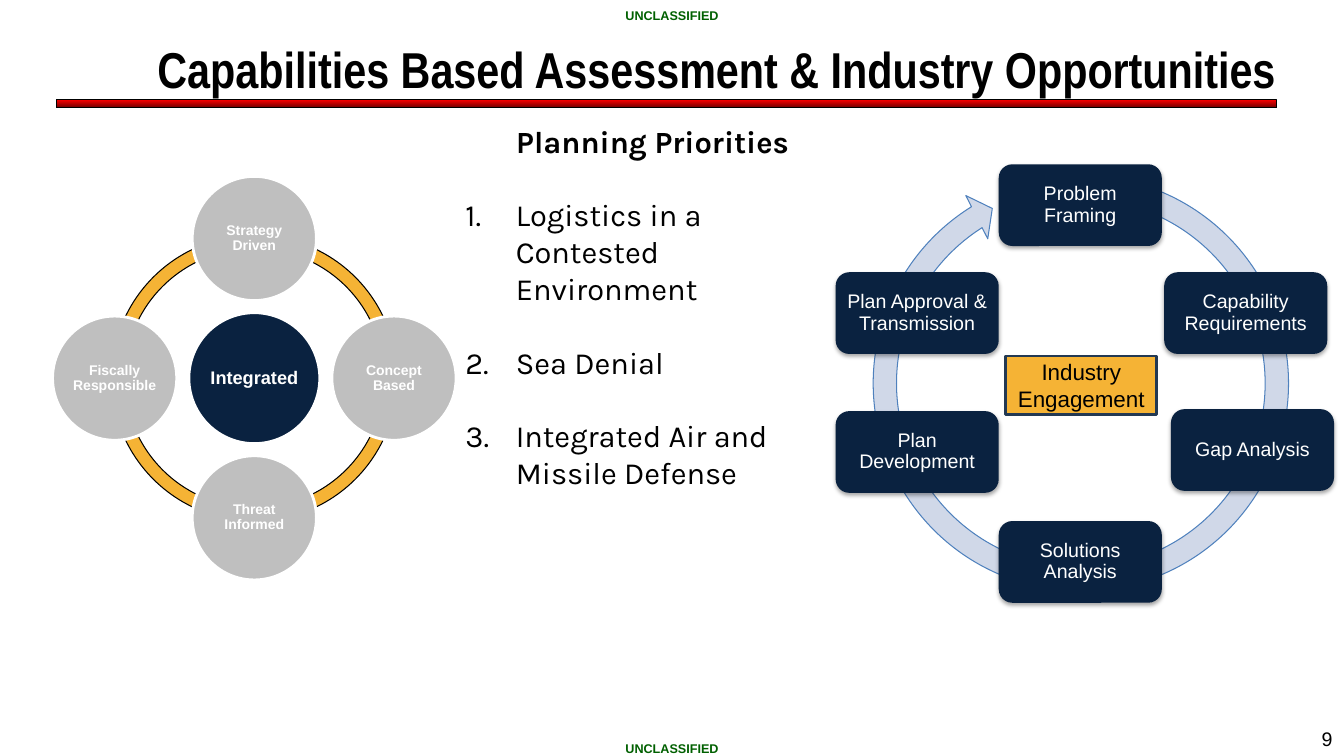
import pptx
import pptx.util
import pptx.dml.color
import pptx.enum.shapes
import pptx.enum.text
from lxml import etree

Cm = pptx.util.Cm
Pt = pptx.util.Pt
Kind = pptx.enum.shapes.MSO_SHAPE
Align = pptx.enum.text.PP_ALIGN
Anchor = pptx.enum.text.MSO_ANCHOR

COLORS = {
    "black": "000000", "white": "FFFFFF", "green": "006000",
    "red": "FF0000", "maroon": "760000", "gold": "F5B335",
    "navy": "0A2240", "gray": "BFBFBF", "pale": "D0D8E8",
    "blue": "4F81BD", "slate": "233953",
}
DRAW = "http://schemas.openxmlformats.org/drawingml/2006/main"


def tint(name):
    return pptx.dml.color.RGBColor.from_string(COLORS[name])


def add_node(parent, tag, **attrs):
    node = etree.SubElement(parent, f"{{{DRAW}}}{tag}")
    for key, value in attrs.items():
        node.set(key, str(value))
    return node


def style(para, size, color="black", bold=False, font="Arial", align=Align.CENTER):
    para.alignment = align
    for run in para.runs:
        run.font.size = Pt(size)
        run.font.name = font
        run.font.bold = bold
        run.font.color.rgb = tint(color)


def write(shape, text, size, inset=None, spacing=None, **look):
    frame = shape.text_frame
    frame.word_wrap = True
    frame.vertical_anchor = Anchor.MIDDLE
    if inset is not None:
        frame.margin_left = frame.margin_right = Cm(inset)
        frame.margin_top = frame.margin_bottom = Cm(inset)
    frame.text = text
    for para in frame.paragraphs:
        style(para, size, **look)
        if spacing:
            para.line_spacing = spacing


def add_box(slide, x, y, w, h):
    return slide.shapes.add_textbox(Cm(x), Cm(y), Cm(w), Cm(h))


def add_form(slide, kind, x, y, w, h, fill=None, line=None, width=0.75, turns=()):
    shape = slide.shapes.add_shape(kind, Cm(x), Cm(y), Cm(w), Cm(h))
    shape.shadow.inherit = False
    for index, turn in enumerate(turns):
        shape.adjustments[index] = turn
    if fill:
        shape.fill.solid()
        shape.fill.fore_color.rgb = tint(fill)
    if line:
        shape.line.color.rgb = tint(line)
        shape.line.width = Pt(width)
    else:
        shape.line.fill.background()
    return shape


def add_frame(slide):
    rule = add_form(slide, Kind.RECTANGLE, 1.42, 2.51, 30.76, 0.2, line="black")
    rule.fill.gradient()
    rule.fill.gradient_angle = 270
    for stop, color, place in zip(rule.fill.gradient_stops, ("red", "maroon"), (0, 1)):
        stop.color.rgb = tint(color)
        stop.position = place
    for top in (0, 18.49):
        write(add_box(slide, 14.94, top, 3.99, 0.76), "UNCLASSIFIED", 9,
              inset=0.1, color="green", bold=True)
    write(add_box(slide, 30.73, 18.19, 3.1, 0.86), "9", 14, align=Align.RIGHT)
    write(add_box(slide, 2.51, 0.46, 31.12, 2.51),
          "Capabilities Based Assessment & Industry Opportunities", 36,
          bold=True, font="Arial Narrow")


def add_disc(slide, x, y, size, text, fill, points):
    disc = add_form(slide, Kind.OVAL, x - size / 2, y - size / 2, size, size,
                    fill, "white", 2)
    write(disc, text, points, inset=0.03, spacing=0.9, color="white", bold=True)


def add_wheel(slide):
    x, y, reach, ring = 6.41, 9.53, 3.52, 7.2
    for part in range(4):
        add_form(slide, Kind.BLOCK_ARC, x - ring / 2, y - ring / 2, ring, ring,
                 "gold", "black",
                 turns=(54 * part, 54 * (part + 1) % 216, 0.046))
    add_disc(slide, x, y, 3.3, "Integrated", "navy", 13)
    for text, across, down in (
        ("Strategy Driven", 0, -1),
        ("Concept Based", 1, 0),
        ("Threat Informed", 0, 1),
        ("Fiscally Responsible", -1, 0),
    ):
        add_disc(slide, x + across * reach, y + down * reach, 3.13, text, "gray", 10)


def add_step(slide, text, x, y):
    step = add_form(slide, Kind.ROUNDED_RECTANGLE, x, y, 4.11, 2.06, "navy")
    glow = add_node(step._element.spPr.find(f"{{{DRAW}}}effectLst"), "outerShdw",
                    blurRad=Pt(3.1), dist=Pt(1.8), dir=5400000, rotWithShape=0)
    add_node(add_node(glow, "srgbClr", val=COLORS["black"]), "alpha", val=35000)
    write(step, text, 14, inset=0.15, spacing=0.9, color="white")


def add_cycle(slide):
    add_form(slide, Kind.CIRCULAR_ARROW, 21.69, 4.11, 11.1, 11.1, "pale", "blue",
             turns=(0.053, 3.126, 142.759, 170.991, 0.055))
    for text, x, y in (
        ("Problem Framing", 25.17, 4.14),
        ("Capability Requirements", 29.34, 6.86),
        ("Gap Analysis", 29.51, 10.31),
        ("Solutions Analysis", 25.17, 13.13),
        ("Plan Development", 21.06, 10.36),
        ("Plan Approval & Transmission", 21.06, 6.86),
    ):
        add_step(slide, text, x, y)
    bar = add_form(slide, Kind.MATH_MINUS, 24.66, 6.58, 5.18, 6.25,
                   "gold", "slate", 2)
    write(bar, "Industry\nEngagement", 16)


def add_goals(slide):
    frame = add_box(slide, 11.48, 2.97, 9.93, 8.71).text_frame
    frame.word_wrap = True
    head = frame.paragraphs[0]
    head.text = "Planning Priorities"
    style(head, 22, bold=True, font="Karla")
    for goal in (
        "Logistics in a Contested Environment",
        "Sea Denial",
        "Integrated Air and Missile Defense",
    ):
        para = frame.add_paragraph()
        para.text = goal
        props = para._p.get_or_add_pPr()
        props.set("marL", str(Cm(1.27)))
        props.set("indent", str(-Cm(1.27)))
        add_node(props, "buFont", typeface="+mj-lt")
        add_node(props, "buAutoNum", type="arabicPeriod")
        para.space_before = Pt(26)
        style(para, 22, font="Karla", align=Align.LEFT)


def main():
    deck = pptx.Presentation()
    deck.slide_width = Cm(33.87)
    deck.slide_height = Cm(19.05)
    slide = deck.slides.add_slide(deck.slide_layouts[6])
    add_frame(slide)
    add_wheel(slide)
    add_cycle(slide)
    add_goals(slide)
    deck.save("out.pptx")


if __name__ == "__main__":
    main()
